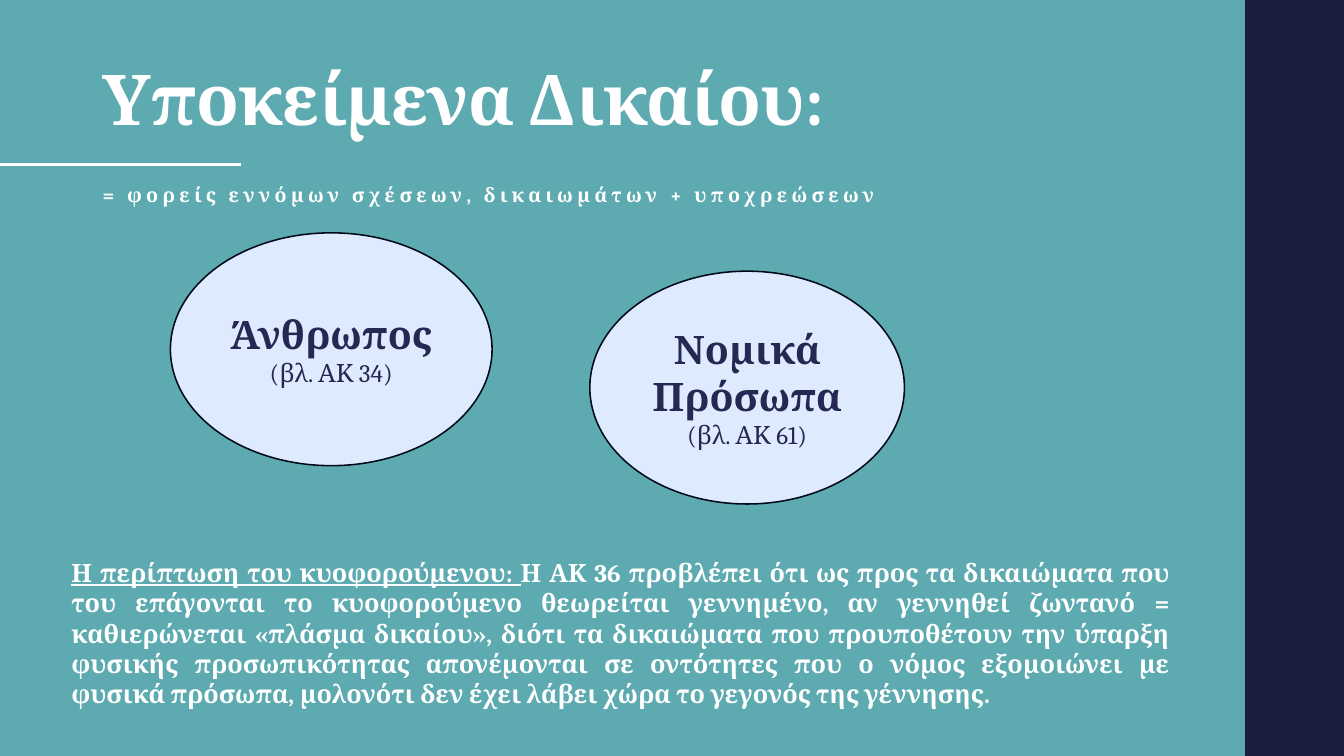
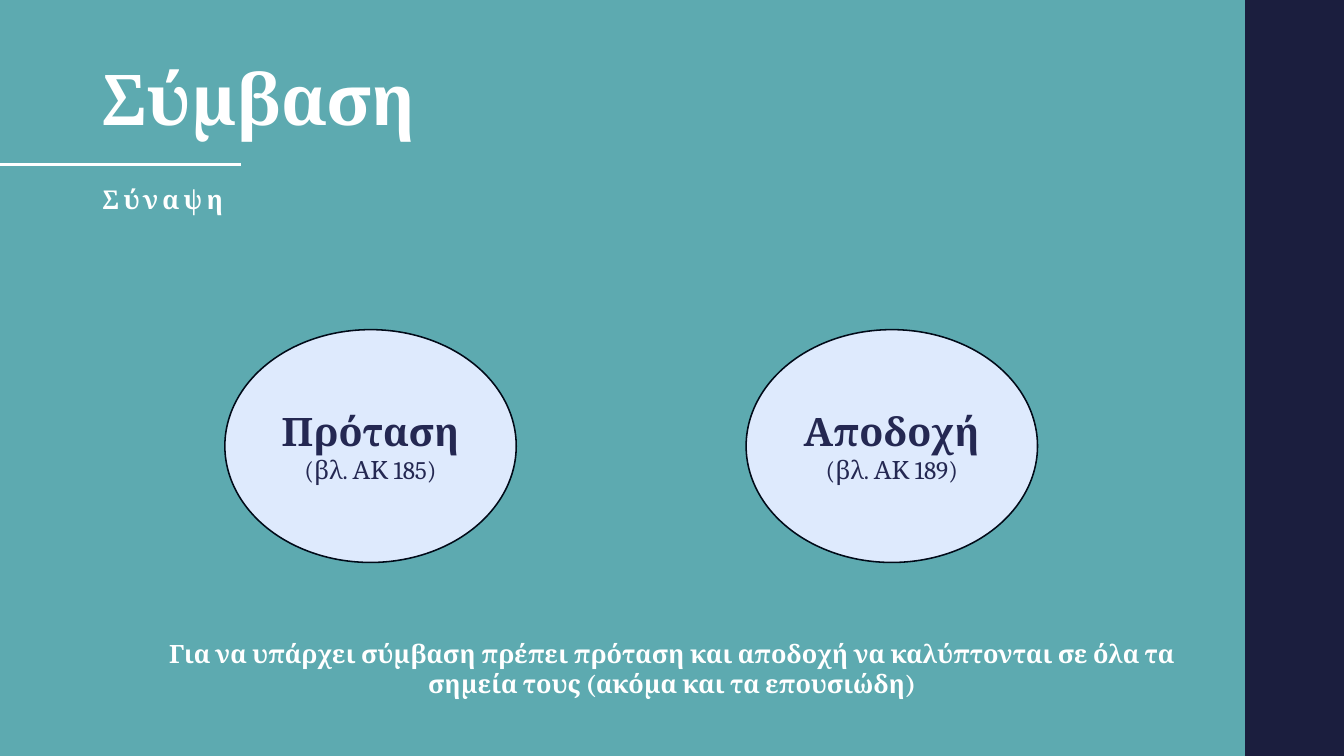
from dataclasses import dataclass

from lxml import etree
from pptx import Presentation
from pptx.dml.color import RGBColor
from pptx.enum import shapes, text
from pptx.oxml.ns import qn
from pptx.util import Inches, Pt

ALIGN = text.PP_ALIGN


@dataclass(frozen=True)
class Theme:
    font: str = "Cambria"
    background: RGBColor = RGBColor.from_string("5DAAB0")
    band: RGBColor = RGBColor.from_string("1B1E3E")
    light: RGBColor = RGBColor.from_string("FFFFFF")
    oval: RGBColor = RGBColor.from_string("DEEAFD")
    outline: RGBColor = RGBColor.from_string("010A18")
    ink: RGBColor = RGBColor.from_string("242852")
    title_size: float = 50
    term_size: float = 28
    body_size: float = 18


T = Theme()


def style(p, size, color, bold=True, align=ALIGN.LEFT, tracking=0):
    """Format a whole paragraph; tracking is letter spacing in points."""
    p.alignment = align
    f = p.font
    f.name, f.size, f.bold = T.font, Pt(size), bold
    f.color.rgb = color
    if tracking:
        p._p.pPr.defRPr.set("spc", str(round(tracking * 100)))


def add_text(s, box, runs, size, align=ALIGN.LEFT, tracking=0, line_spacing=1.0):
    """Add a one-paragraph text box; runs are (text, underlined) pairs."""
    tf = s.shapes.add_textbox(*map(Inches, box)).text_frame
    tf.word_wrap = True
    p = tf.paragraphs[0]
    for words, underlined in runs:
        r = p.add_run()
        r.text = words
        if underlined:
            r.font.underline = True
    p.line_spacing = line_spacing
    style(p, size, T.light, align=align, tracking=tracking)


def add_oval(s, box, term, article):
    sp = s.shapes.add_shape(shapes.MSO_SHAPE.OVAL, *map(Inches, box))
    sp.shadow.inherit = False
    sp.fill.solid()
    sp.fill.fore_color.rgb = T.oval
    sp.line.color.rgb = T.outline
    sp.line.width = Pt(1.1)
    tf = sp.text_frame
    tf.word_wrap = True
    tf.vertical_anchor = text.MSO_ANCHOR.MIDDLE
    tf.text = f"{term}\n(βλ. ΑΚ {article})"
    heading, reference = tf.paragraphs
    style(heading, T.term_size, T.ink, align=ALIGN.CENTER)
    style(reference, T.body_size, T.ink, bold=False, align=ALIGN.CENTER)


def add_base(prs, title):
    """Add a slide with the background, side band, title and title rule."""
    s = prs.slides.add_slide(prs.slide_layouts[6])
    s.background.fill.solid()
    s.background.fill.fore_color.rgb = T.background

    band_left = Inches(12.35)
    band = s.shapes.add_shape(shapes.MSO_SHAPE.RECTANGLE, band_left, 0,
                              prs.slide_width - band_left, prs.slide_height)
    band.shadow.inherit = False
    band.fill.solid()
    band.fill.fore_color.rgb = T.band
    band.line.fill.background()

    y = Inches(1.63)
    rule = s.shapes.add_connector(shapes.MSO_CONNECTOR.STRAIGHT,
                                  0, y, Inches(2.39), y)
    rule.line.color.rgb = T.light
    rule.line.width = Pt(2)
    etree.SubElement(rule._element.spPr, qn("a:effectLst"))

    add_text(s, (0.92, 0.6, 7.93, 0.97), [(title, False)], T.title_size,
             tracking=-0.5, line_spacing=0.9)
    return s


def add_subtitle(s, words, size, line_spacing):
    add_text(s, (0.92, 1.82, 8.32, 0.48), [(words, False)], size,
             tracking=3, line_spacing=line_spacing)


def add_subjects_slide(prs):
    s = add_base(prs, "Υποκείμενα Δικαίου:")
    add_subtitle(s, "= φορείς εννόμων σχέσεων, δικαιωμάτων + υποχρεώσεων", 14, 0.75)
    add_oval(s, (1.69, 2.31, 3.19, 2.31), "Άνθρωπος", 34)
    add_oval(s, (5.85, 2.69, 3.12, 2.31), "Νομικά Πρόσωπα", 61)
    add_text(s, (0.61, 5.48, 11.09, 1.92), [
        ("Η περίπτωση του κυοφορούμενου: ", True),
        ("Η ΑΚ 36 προβλέπει ότι ως προς τα δικαιώματα που του επάγονται το "
         "κυοφορούμενο θεωρείται γεννημένο, αν γεννηθεί ζωντανό = καθιερώνεται "
         "«πλάσμα δικαίου», διότι τα δικαιώματα που προυποθέτουν την ύπαρξη "
         "φυσικής προσωπικότητας απονέμονται σε οντότητες που ο νόμος "
         "εξομοιώνει με φυσικά πρόσωπα, μολονότι δεν έχει λάβει χώρα το "
         "γεγονός της γέννησης.", False),
    ], T.body_size, ALIGN.JUSTIFY)


def add_contract_slide(prs):
    s = add_base(prs, "Σύμβαση")
    add_subtitle(s, "Σύναψη", 18.5, 0.85)
    for left, term, article in ((2.23, "Πρόταση", 185), (7.4, "Αποδοχή", 189)):
        add_oval(s, (left, 3.27, 2.89, 2.31), term, article)
    add_text(s, (1.12, 6.28, 11.09, 0.71), [
        ("Για να υπάρχει σύμβαση πρέπει πρόταση και αποδοχή να καλύπτονται "
         "σε όλα τα σημεία τους (ακόμα και τα επουσιώδη)", False),
    ], T.body_size, ALIGN.CENTER)


def main():
    prs = Presentation()
    prs.slide_width, prs.slide_height = Inches(13.33), Inches(7.5)
    add_subjects_slide(prs)
    add_contract_slide(prs)
    prs.save("out.pptx")


if __name__ == "__main__":
    main()
